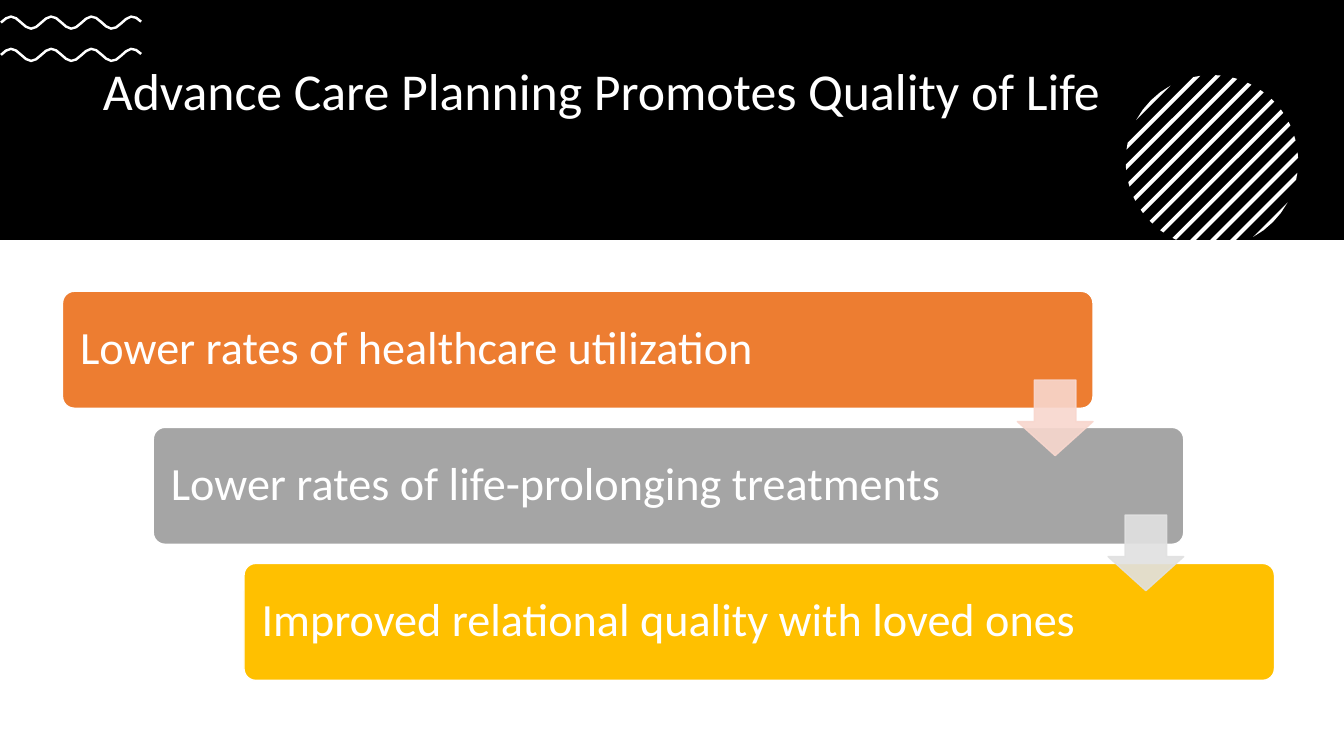
import math
from lxml import etree
from pptx import Presentation
from pptx.dml.color import RGBColor
from pptx.enum.shapes import MSO_SHAPE
from pptx.enum.text import MSO_ANCHOR, MSO_AUTO_SIZE, PP_ALIGN
from pptx.oxml.ns import qn
from pptx.util import Inches, Pt

RECTANGLE = MSO_SHAPE.RECTANGLE
ROUNDED = MSO_SHAPE.ROUNDED_RECTANGLE
DOWN_ARROW = MSO_SHAPE.DOWN_ARROW
MIDDLE = MSO_ANCHOR.MIDDLE
LEFT = PP_ALIGN.LEFT
NO_AUTOFIT = MSO_AUTO_SIZE.NONE

COLORS = {
    "black": "000000",
    "white": "FFFFFF",
    "orange": "ED7D31",
    "gray": "A5A5A5",
    "gold": "FFC000",
    "pale orange": "F8D7CE",
    "pale gray": "E1E1E1",
}
BENEFITS = [
    ("Lower rates of healthcare utilization", "orange"),
    ("Lower rates of life-prolonging treatments", "gray"),
    ("Improved relational quality with loved ones", "gold"),
]
BANNER_HEIGHT = 2.38


def paint(shape, fill, line=None):
    shape.shadow.inherit = False
    shape.fill.solid()
    shape.fill.fore_color.rgb = RGBColor.from_string(COLORS[fill])
    if line:
        shape.line.color.rgb = RGBColor.from_string(COLORS[line])
        shape.line.width = Pt(1)
    else:
        shape.line.fill.background()


def add_outline(shapes, points):
    corners = [(Inches(x), Inches(y)) for x, y in points]
    builder = shapes.build_freeform(*corners[0], scale=1.0)
    builder.add_line_segments(corners[1:], close=True)
    paint(builder.convert_to_shape(), "white")


prs = Presentation()
prs.slide_width = Inches(13.33)
prs.slide_height = Inches(7.5)
slide = prs.slides.add_slide(prs.slide_layouts[5])
shapes = slide.shapes

title = shapes.title
banner = shapes.add_shape(RECTANGLE, 0, 0, prs.slide_width, Inches(BANNER_HEIGHT))
paint(banner, "black")
title._element.addprevious(banner._element)

title.left, title.top = Inches(0.92), Inches(0.62)
title.width, title.height = Inches(11.5), Inches(1.23)
title.text_frame.text = "Advance Care Planning Promotes Quality of Life"
title.text_frame.auto_size = NO_AUTOFIT
title.text_frame.word_wrap = True
title.text_frame.vertical_anchor = MIDDLE
heading = title.text_frame.paragraphs[0]
heading.add_line_break()
heading.alignment = LEFT
heading.line_spacing = 0.9
heading.font.name = "Calibri"
heading.font.size = Pt(37)
heading.font.color.rgb = RGBColor.from_string(COLORS["white"])

WAVE_STEPS = 28
WAVE_LENGTH = 0.4
WAVE_HEIGHT = 0.06
WAVE_HALF_THICKNESS = 0.0125
for wave_middle in (0.545, 0.225):
    upper, lower = [], []
    for step in range(WAVE_STEPS + 1):
        x = 0.01 + 1.39 * step / WAVE_STEPS
        phase = math.tau * (x - 0.11) / WAVE_LENGTH
        y = wave_middle - WAVE_HEIGHT * math.cos(phase)
        slope = WAVE_HEIGHT * math.tau / WAVE_LENGTH * math.sin(phase)
        dy = WAVE_HALF_THICKNESS / math.hypot(1, slope)
        dx = -slope * dy
        upper.append((x - dx, y - dy))
        lower.append((x + dx, y + dy))
    add_outline(shapes, upper + lower[::-1])

CIRCLE_X, CIRCLE_Y, RADIUS = 12.02, 1.6, 0.855
STRIPE_GAP, STRIPE_HALF_WIDTH = 0.14, 0.02
OUTER_STRIPE = 6
for stripe in range(-OUTER_STRIPE, OUTER_STRIPE + 1):
    near, far = [
        math.asin(max(-1, min(1, (stripe * STRIPE_GAP + edge) / RADIUS)))
        for edge in (-STRIPE_HALF_WIDTH, STRIPE_HALF_WIDTH)
    ]
    arc_steps = 2 if abs(stripe) == OUTER_STRIPE else 1
    right_end, left_end = [], []
    for step in range(arc_steps + 1):
        angle = near + (far - near) * step / arc_steps
        across = RADIUS * math.sin(angle) / math.sqrt(2)
        along = RADIUS * math.cos(angle) / math.sqrt(2)
        right_end.append((CIRCLE_X + across + along, CIRCLE_Y + across - along))
        x, y = CIRCLE_X + across - along, CIRCLE_Y + across + along
        overflow = max(0, y - BANNER_HEIGHT)
        left_end.append((x + overflow, y - overflow))
    add_outline(shapes, right_end + left_end[::-1])

for index, (benefit, color) in enumerate(BENEFITS):
    step_box = shapes.add_shape(ROUNDED, Inches(0.62 + 0.9 * index), Inches(2.89 + 1.35 * index),
                                Inches(10.22), Inches(1.16))
    step_box.adjustments[0] = 0.1
    paint(step_box, color, "white")
    frame = step_box.text_frame
    frame.text = benefit
    frame.word_wrap = True
    frame.vertical_anchor = MIDDLE
    frame.margin_left = frame.margin_right = Inches(0.14)
    frame.margin_top = frame.margin_bottom = Inches(0.14)
    label = frame.paragraphs[0]
    label.alignment = LEFT
    label.line_spacing = 0.9
    label.font.name = "Calibri"
    label.font.size = Pt(33)
    label.font.color.rgb = RGBColor.from_string(COLORS["white"])

for index, color in enumerate(("pale orange", "pale gray")):
    arrow = shapes.add_shape(DOWN_ARROW, Inches(10.09 + 0.9 * index), Inches(3.77 + 1.34 * index),
                             Inches(0.75), Inches(0.75))
    arrow.adjustments[0] = 0.55
    arrow.adjustments[1] = 0.45
    paint(arrow, color, color)
    for tint in arrow._element.spPr.iter(qn("a:srgbClr")):
        etree.SubElement(tint, qn("a:alpha")).set("val", "90000")

prs.save("out.pptx")
